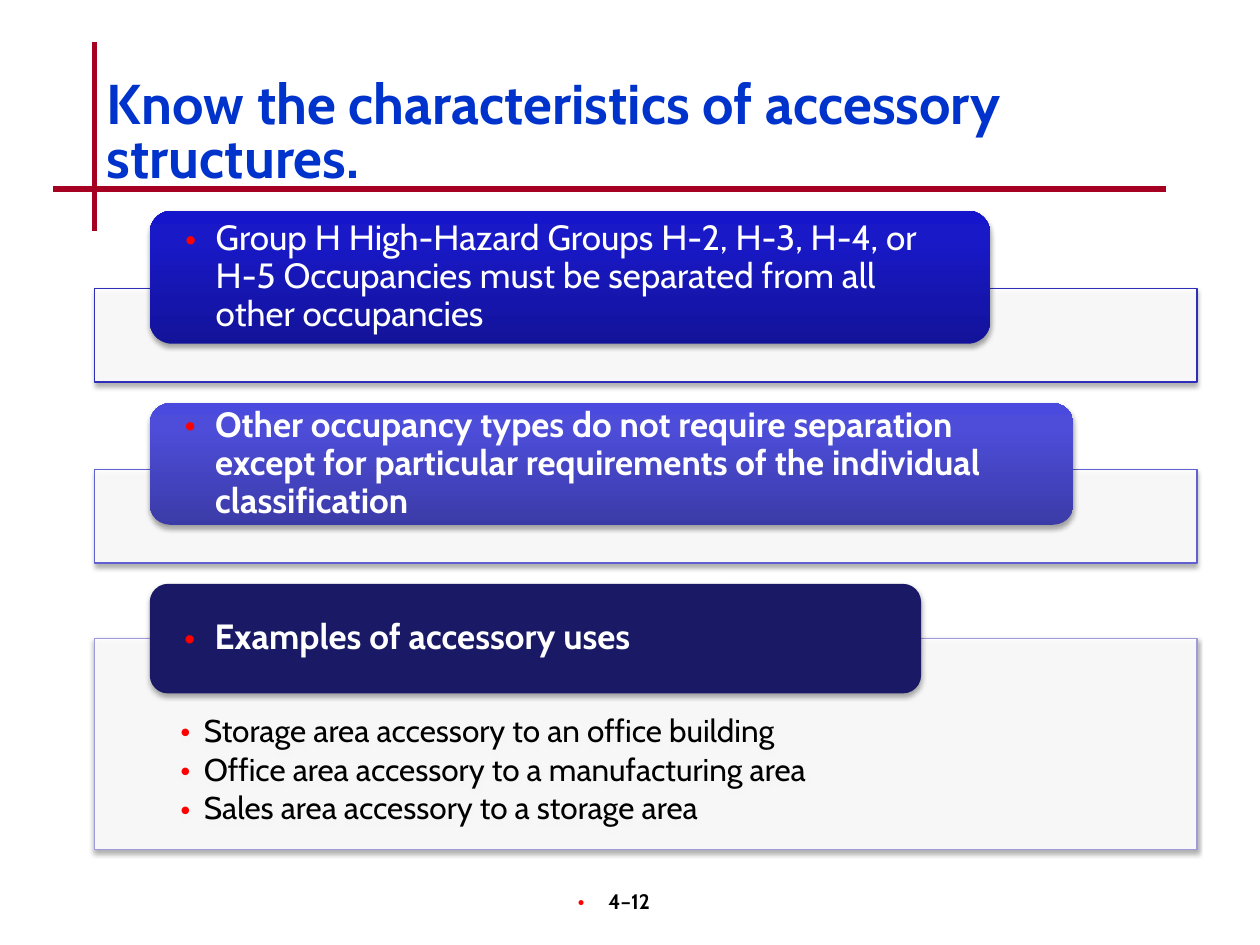
from lxml import etree
from pptx import Presentation
from pptx import util as u
from pptx.dml.color import RGBColor
from pptx.enum import shapes, text
from pptx.oxml import parse_xml
from pptx.oxml.ns import nsdecls, qn

FONT = "Cabin"
CRIMSON = RGBColor(0xA5, 0x00, 0x21)
BLUE = RGBColor(0x00, 0x33, 0xCC)
RED = RGBColor(0xFF, 0x00, 0x00)
WHITE = RGBColor(0xFF, 0xFF, 0xFF)
BLACK = RGBColor(0x00, 0x00, 0x00)
NAVY = RGBColor(0x19, 0x19, 0x66)
EDGES = [RGBColor(0x2E, 0x2E, 0xB9), RGBColor(0x60, 0x60, 0xD0), RGBColor(0x9C, 0x9C, 0xDD)]
DEEP = [RGBColor(0x13, 0x13, 0x9A), RGBColor(0x19, 0x19, 0xC8), RGBColor(0x15, 0x15, 0xCC)]
VIOLET = [RGBColor(0x3B, 0x3B, 0xA8), RGBColor(0x4D, 0x4D, 0xDA), RGBColor(0x4A, 0x4A, 0xDE)]


def add_text(p, words, size, color, bold=False, indent=0.0, spacing=None):
    """Write one run; an indent makes the paragraph a red bullet."""
    if indent:
        pPr = p._p.get_or_add_pPr()
        pPr.set("marL", str(u.Cm(indent)))
        pPr.set("indent", str(-u.Cm(indent)))
        for xml in (f'<a:buClr {nsdecls("a")}><a:srgbClr val="{RED}"/></a:buClr>',
                    f'<a:buSzPct {nsdecls("a")} val="110000"/>',
                    f'<a:buFont {nsdecls("a")} typeface="{FONT}"/>',
                    f'<a:buChar {nsdecls("a")} char="•"/>'):
            pPr.append(parse_xml(xml))
    if spacing:
        p.line_spacing = spacing
    r = p.add_run()
    r.text = words
    r.font.name, r.font.size, r.font.bold = FONT, u.Pt(size), bold
    r.font.color.rgb = color


def add_card(kind, left, top, width, height):
    """Add a shape with a soft shadow straight below it."""
    sp = slide.shapes.add_shape(kind, u.Cm(left), u.Cm(top), u.Cm(width), u.Cm(height))
    sp.line.fill.background()
    sp.shadow.inherit = False
    effects = sp._element.spPr.find(qn("a:effectLst"))
    effects.append(parse_xml(
        f'<a:outerShdw {nsdecls("a")} blurRad="{u.Pt(3.1)}" dist="{u.Pt(1.8)}" dir="5400000" '
        'rotWithShape="0"><a:srgbClr val="000000"><a:alpha val="35000"/></a:srgbClr></a:outerShdw>'))
    sp.text_frame.word_wrap = True
    return sp


prs = Presentation()
prs.slide_width, prs.slide_height = u.Cm(25.4), u.Cm(19.05)
slide = prs.slides.add_slide(prs.slide_layouts[5])

# Crossed rules
for x1, y1, x2, y2 in [(1.9, 0.85, 1.9, 4.65), (1.06, 3.81, 23.5, 3.81)]:
    line = slide.shapes.add_connector(shapes.MSO_CONNECTOR.STRAIGHT,
                                      u.Cm(x1), u.Cm(y1), u.Cm(x2), u.Cm(y2))
    line.line.color.rgb = CRIMSON
    line.line.width = u.Pt(3)
    etree.SubElement(line._element.spPr, qn("a:effectLst"))

# Title
title = slide.shapes.title
title.left, title.top, title.width, title.height = u.Cm(1.9), u.Cm(1.4), u.Cm(21.6), u.Cm(2.54)
tf = title.text_frame
tf.word_wrap = True
tf.auto_size = text.MSO_AUTO_SIZE.NONE
tf.vertical_anchor = text.MSO_ANCHOR.BOTTOM
p = tf.paragraphs[0]
p.alignment = text.PP_ALIGN.LEFT
add_text(p, "Know the characteristics of accessory structures.", 32, BLUE, True, spacing=0.8)

# Rows: panel top and height, header top, width and height, header fill, bold, header, details
rows = [
    (5.82, 1.88, 4.25, 16.94, 2.68, DEEP, False,
     "Group H High-Hazard Groups H-2, H-3, H-4, or H-5 Occupancies "
     "must be separated from all other occupancies", []),
    (9.47, 1.88, 8.13, 18.62, 2.45, VIOLET, True,
     "Other occupancy types do not require separation except for "
     "particular requirements of the individual classification", []),
    (12.87, 4.25, 11.77, 15.55, 2.21, NAVY, True, "Examples of accessory uses",
     ["Storage area accessory to an office building",
      "Office area accessory to a manufacturing area",
      "Sales area accessory to a storage area"]),
]
for edge, row in zip(EDGES, rows):
    panel_top, panel_height, top, width, height, fill, bold, header, details = row

    # Panel with its details
    panel = add_card(shapes.MSO_SHAPE.RECTANGLE, 1.9, panel_top, 22.23, panel_height)
    panel.fill.solid()
    panel.fill.fore_color.rgb = WHITE
    white = panel._element.spPr.find(qn("a:solidFill")).find(qn("a:srgbClr"))
    etree.SubElement(white, qn("a:alpha")).set("val", "90000")
    panel.line.color.rgb = edge
    panel.line.width = u.Pt(0.75)
    tf = panel.text_frame
    tf.vertical_anchor = text.MSO_ANCHOR.TOP
    tf.margin_left = tf.margin_right = u.Cm(1.73)
    tf.margin_top, tf.margin_bottom = u.Cm(1.55), u.Cm(0.36)
    for i, detail in enumerate(details):
        p = tf.add_paragraph() if i else tf.paragraphs[0]
        p.alignment = text.PP_ALIGN.LEFT
        p.space_after = u.Pt(2.7)
        add_text(p, detail, 18, BLACK, indent=0.48, spacing=0.9)

    # Header
    pill = add_card(shapes.MSO_SHAPE.ROUNDED_RECTANGLE, 3.02, top, width, height)
    if isinstance(fill, list):
        stops = "".join(f'<a:gs pos="{pos}"><a:srgbClr val="{color}"/></a:gs>'
                        for pos, color in zip((0, 80000, 100000), fill))
        pill._element.spPr.find(qn("a:ln")).addprevious(parse_xml(
            f'<a:gradFill {nsdecls("a")} rotWithShape="1"><a:gsLst>{stops}</a:gsLst>'
            '<a:lin ang="16200000" scaled="0"/></a:gradFill>'))
    else:
        pill.fill.solid()
        pill.fill.fore_color.rgb = fill
    tf = pill.text_frame
    tf.vertical_anchor = text.MSO_ANCHOR.MIDDLE
    tf.margin_left = tf.margin_right = u.Cm(0.58)
    tf.margin_top = tf.margin_bottom = 0
    p = tf.paragraphs[0]
    p.alignment = text.PP_ALIGN.LEFT
    add_text(p, header, 20, WHITE, bold, indent=0.62, spacing=0.9)

# Page number
tf = slide.shapes.add_textbox(u.Cm(9.96), u.Cm(17.78), u.Cm(5.28), u.Cm(1.27)).text_frame
tf.word_wrap = True
tf.margin_right = u.Cm(0.7)
p = tf.paragraphs[0]
p.alignment = text.PP_ALIGN.CENTER
add_text(p, "4–12", 12, BLACK, True, indent=0.62)

prs.save("out.pptx")
